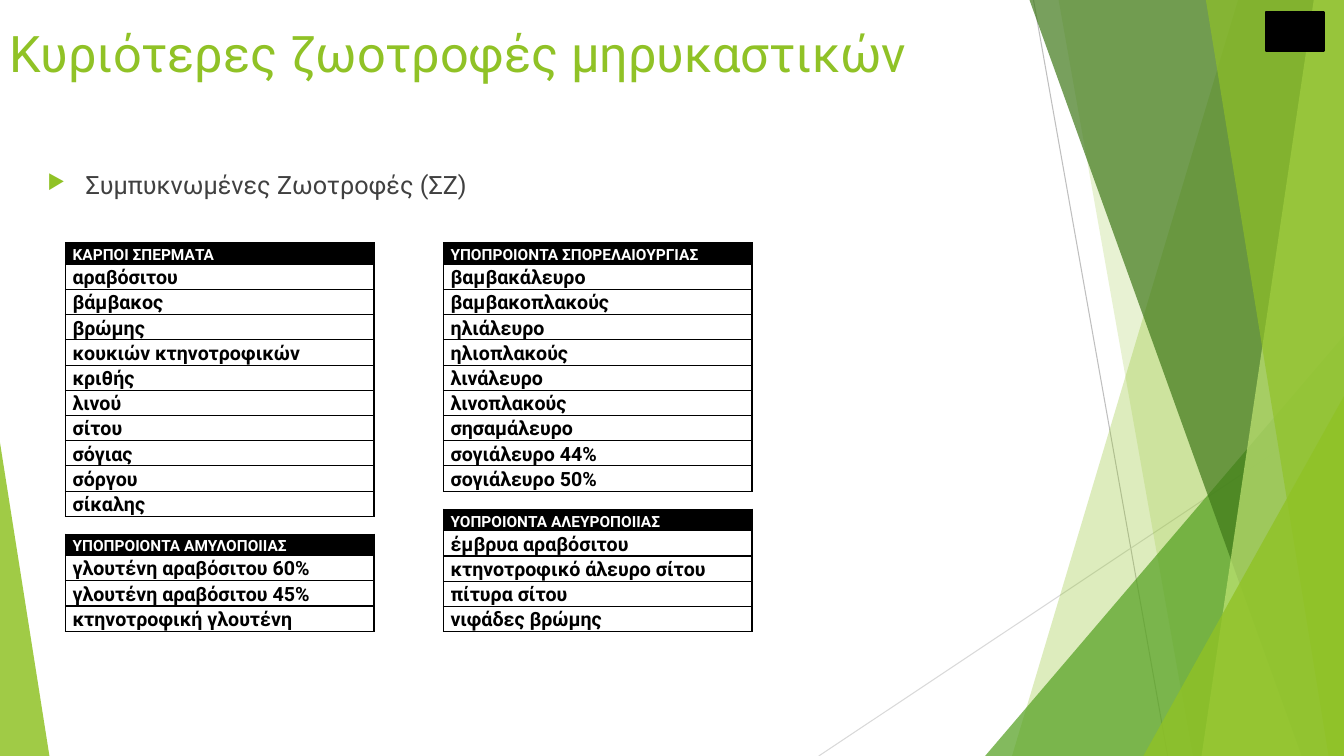
import pptx
import pptx.util
import pptx.dml.color
import pptx.enum.shapes
import pptx.enum.text
import pptx.oxml.ns
import lxml.etree

RGBColor = pptx.dml.color.RGBColor
LIME = RGBColor(0x90, 0xC2, 0x26)
GREEN = RGBColor(0x54, 0xA0, 0x21)
FOREST = RGBColor(0x3F, 0x78, 0x19)
PALE = RGBColor(0xC0, 0xE4, 0x74)
CHARCOAL = RGBColor(0x40, 0x40, 0x40)
SILVER = RGBColor(0xBF, 0xBF, 0xBF)
MIST = RGBColor(0xD9, 0xD9, 0xD9)
BLACK = RGBColor(0, 0, 0)
WHITE = RGBColor(0xFF, 0xFF, 0xFF)

deck = pptx.Presentation()
deck.slide_width = pptx.util.Inches(13.33)
deck.slide_height = pptx.util.Inches(7.5)
slide = deck.slides.add_slide(deck.slide_layouts[6])
COL = deck.slide_width / 100
ROW = deck.slide_height / 100


def add_xml(parent, tag, **attributes):
    return lxml.etree.SubElement(parent, pptx.oxml.ns.qn(tag), attributes)


def write(frame, text, size, color, bold=False, line=None, before=None, after=None):
    frame.word_wrap = True
    paragraph = frame.paragraphs[0]
    paragraph.line_spacing = line
    paragraph.space_before = before
    paragraph.space_after = after
    run = paragraph.add_run()
    run.text = text
    run.font.name = "Roboto"
    run.font.size = pptx.util.Pt(size)
    run.font.bold = bold
    run.font.color.rgb = color
    return paragraph


for x1, y1, x2, y2, color in [
    (76.9, 0, 86.88, 100, SILVER),
    (100, 53.73, 60.92, 100, MIST),
]:
    ray = slide.shapes.add_connector(
        pptx.enum.shapes.MSO_CONNECTOR.STRAIGHT,
        int(x1 * COL), int(y1 * ROW), int(x2 * COL), int(y2 * ROW))
    ray.line.color.rgb = color
    ray.line.width = pptx.util.Pt(0.75)
    add_xml(ray._element.spPr, "a:effectLst")

facets = [
    ([(92.12, 0), (100, 0), (100, 100), (75.3, 100)], LIME, 30),
    ([(78.77, 0), (100, 0), (100, 100), (88.75, 100)], LIME, 20),
    ((73.3, 44.4, 100, 1), GREEN, 72),
    ([(76.6, 0), (100, 0), (100, 100), (96.85, 100)], FOREST, 70),
    ([(97.75, 0), (100, 0), (100, 100), (89.4, 100)], PALE, 70),
    ([(89.72, 0), (100, 0), (100, 100), (98.85, 100)], LIME, 65),
    ((85.07, 52.4, 100, 1), LIME, 80),
    ((0, 58.53, 3.68, 0), LIME, 85),
]
for outline, color, opacity in facets:
    if isinstance(outline, list):
        corners = [(int(x * COL), int(y * ROW)) for x, y in outline]
        builder = slide.shapes.build_freeform(*corners[0])
        builder.add_line_segments(corners[1:], close=True)
        facet = builder.convert_to_shape()
    else:
        left, top, right, apex = outline
        facet = slide.shapes.add_shape(
            pptx.enum.shapes.MSO_SHAPE.ISOSCELES_TRIANGLE,
            int(left * COL), int(top * ROW),
            int((right - left) * COL), int((100 - top) * ROW))
        facet.adjustments[0] = apex
    facet.shadow.inherit = False
    facet.fill.solid()
    facet.fill.fore_color.rgb = color
    facet.line.fill.background()
    tint = facet._element.spPr.find(".//" + pptx.oxml.ns.qn("a:srgbClr"))
    add_xml(tint, "a:alpha", val=str(opacity * 1000))

title = slide.shapes.add_textbox(0, int(2.27 * ROW), int(70.52 * COL), int(19.2 * ROW))
write(title.text_frame, "Κυριότερες ζωοτροφές μηρυκαστικών", 36, LIME)

topic = slide.shapes.add_textbox(
    int(2.78 * COL), int(21.73 * ROW), int(74.79 * COL), int(56.53 * ROW))
topic_line = write(topic.text_frame, "Συμπυκνωμένες Ζωοτροφές (ΣΖ)", 18, CHARCOAL,
                   before=pptx.util.Pt(10))
bullet = topic_line._p.get_or_add_pPr()
indent = int(2.85 * COL)
bullet.set("marL", str(indent))
bullet.set("indent", str(-indent))
add_xml(add_xml(bullet, "a:buClr"), "a:srgbClr", val=str(LIME))
add_xml(bullet, "a:buSzPct", val="80000")
add_xml(bullet, "a:buChar", char="▶")

HEADING_ROWS, FEED_ROWS, GAP_ROWS = 2.83, 3.29, 2.8
feed_columns = [
    (4.88, [
        ["ΚΑΡΠΟΙ ΣΠΕΡΜΑΤΑ", "αραβόσιτου", "βάμβακος", "βρώμης",
         "κουκιών κτηνοτροφικών", "κριθής", "λινού", "σίτου", "σόγιας",
         "σόργου", "σίκαλης"],
        ["ΥΠΟΠΡΟΙΟΝΤΑ ΑΜΥΛΟΠΟΙΙΑΣ", "γλουτένη αραβόσιτου 60%",
         "γλουτένη αραβόσιτου 45%", "κτηνοτροφική γλουτένη"],
    ]),
    (33, [
        ["ΥΠΟΠΡΟΙΟΝΤΑ ΣΠΟΡΕΛΑΙΟΥΡΓΙΑΣ", "βαμβακάλευρο", "βαμβακοπλακούς",
         "ηλιάλευρο", "ηλιοπλακούς", "λινάλευρο", "λινοπλακούς",
         "σησαμάλευρο", "σογιάλευρο 44%", "σογιάλευρο 50%"],
        ["ΥΟΠΡΟΙΟΝΤΑ ΑΛΕΥΡΟΠΟΙΙΑΣ", "έμβρυα αραβόσιτου",
         "κτηνοτροφικό άλευρο σίτου", "πίτυρα σίτου", "νιφάδες βρώμης"],
    ]),
]
for left, groups in feed_columns:
    top = 32.13
    for feeds in groups:
        height = HEADING_ROWS + FEED_ROWS * (len(feeds) - 1)
        table = slide.shapes.add_table(
            len(feeds), 1, int(left * COL), int(top * ROW),
            int(22.95 * COL), int(height * ROW)).table
        table.first_row = False
        table.horz_banding = False
        for index, feed in enumerate(feeds):
            heading = index == 0
            table.rows[index].height = int((HEADING_ROWS if heading else FEED_ROWS) * ROW)
            cell = table.cell(index, 0)
            cell.margin_left = cell.margin_right = pptx.util.Inches(0.07)
            cell.margin_top = cell.margin_bottom = 0
            cell.vertical_anchor = pptx.enum.text.MSO_ANCHOR.BOTTOM
            write(cell.text_frame, feed, 11 if heading else 14,
                  WHITE if heading else BLACK, bold=True, line=1.07,
                  after=pptx.util.Pt(8))
            properties = cell._tc.get_or_add_tcPr()
            for side in ("a:lnL", "a:lnR", "a:lnT", "a:lnB"):
                border = add_xml(properties, side, w="12700")
                add_xml(add_xml(border, "a:solidFill"), "a:srgbClr", val=str(BLACK))
            cell.fill.solid()
            cell.fill.fore_color.rgb = BLACK if heading else WHITE
        top += height + GAP_ROWS

corner_block = slide.shapes.add_shape(
    pptx.enum.shapes.MSO_SHAPE.RECTANGLE,
    int(94.2 * COL), int(1.6 * ROW), int(4.28 * COL), int(5.2 * ROW))
corner_block.shadow.inherit = False
corner_block.fill.solid()
corner_block.fill.fore_color.rgb = BLACK
corner_block.line.color.rgb = BLACK
corner_block.line.width = pptx.util.Pt(1.5)

deck.save("out.pptx")
